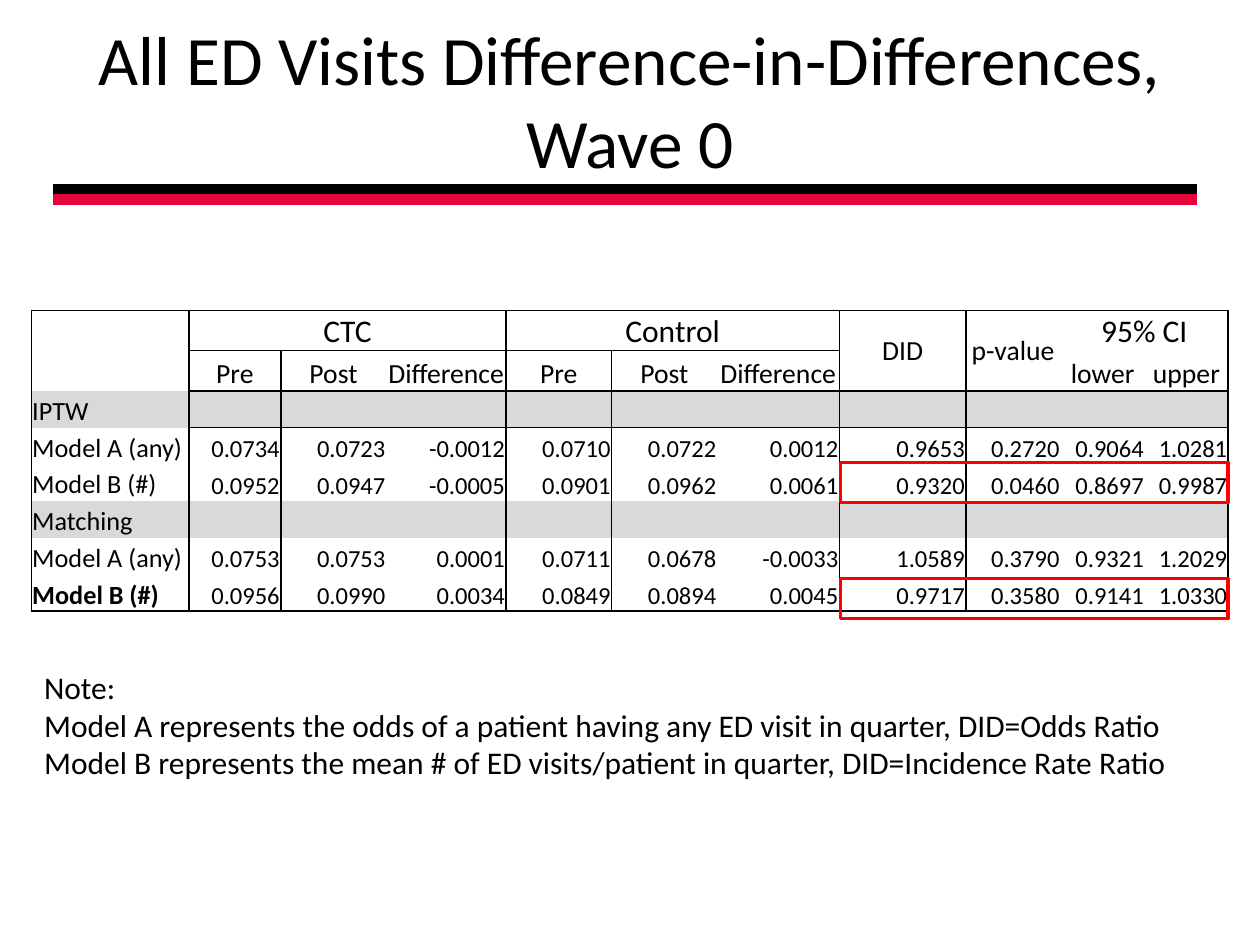
"""Build the slide of emergency visit difference-in-differences results."""
from lxml import etree
from pptx import Presentation
from pptx.dml.color import RGBColor
from pptx.enum import shapes, text
from pptx.oxml import ns
from pptx.util import Cm, Pt

HUES = {"ink": "000000", "red": "E5053A", "mark": "FF0000", "band": "D9D9D9", "page": "FFFFFF"}
HUE = {name: RGBColor.from_string(code) for name, code in HUES.items()}
LEFT, MID, RIGHT = text.PP_ALIGN.LEFT, text.PP_ALIGN.CENTER, text.PP_ALIGN.RIGHT


def write(para, words, size, align, bold=False):
    run = para.add_run()
    run.text = words
    para.alignment = align
    for key, val in {"name": "Calibri", "size": Pt(size), "bold": bold}.items():
        setattr(run.font, key, val)
    run.font.color.rgb = HUE["ink"]


def edge(props, side, spot, shown):
    line = etree.Element(ns.qn(f"a:ln{side}"), w=str(Pt(1)))
    if shown:
        fill = etree.SubElement(line, ns.qn("a:solidFill"))
        etree.SubElement(fill, ns.qn("a:srgbClr"), val=HUES["ink"])
    else:
        etree.SubElement(line, ns.qn("a:noFill"))
    props.insert(spot, line)


deck = Presentation()
deck.slide_width, deck.slide_height = Cm(25.4), Cm(19.05)
slide = deck.slides.add_slide(deck.slide_layouts[6])

for top, hue in ((3.81, "ink"), (4.02, "red")):
    rule = slide.shapes.add_connector(
        shapes.MSO_CONNECTOR.STRAIGHT, Cm(1.06), Cm(top), Cm(24.13), Cm(top))
    rule.line.color.rgb = HUE[hue]
    rule.line.width = Pt(6)
    etree.SubElement(rule._element.spPr, ns.qn("a:effectLst"))

title = slide.shapes.add_textbox(Cm(1.27), Cm(0.42), Cm(22.86), Cm(3.18)).text_frame
title.word_wrap = True
title.vertical_anchor = text.MSO_ANCHOR.MIDDLE
write(title.paragraphs[0], "All ED Visits Difference-in-Differences, Wave 0", 39.6, MID)

ROWS = [
    ["", "CTC", "", "", "Control", "", "", "DID", "p-value", "95% CI", ""],
    ["", *["Pre", "Post", "Difference"] * 2, "", "", "lower", "upper"],
    ["IPTW"] + [""] * 10,
    ["Model A (any)", "0.0734", "0.0723", "-0.0012", "0.0710", "0.0722", "0.0012",
     "0.9653", "0.2720", "0.9064", "1.0281"],
    ["Model B (#)", "0.0952", "0.0947", "-0.0005", "0.0901", "0.0962", "0.0061",
     "0.9320", "0.0460", "0.8697", "0.9987"],
    ["Matching"] + [""] * 10,
    ["Model A (any)", "0.0753", "0.0753", "0.0001", "0.0711", "0.0678", "-0.0033",
     "1.0589", "0.3790", "0.9321", "1.2029"],
    ["Model B (#)", "0.0956", "0.0990", "0.0034", "0.0849", "0.0894", "0.0045",
     "0.9717", "0.3580", "0.9141", "1.0330"],
]
WIDE = [3.18, 1.85, 2.13, 2.41, 2.13, 2.13, 2.46, 2.55, 1.91, 1.7, 1.68]
HIGH = [0.81] * 2 + [0.74] * 6
SPANS = [(0, 1, 0, 3), (0, 4, 0, 6), (0, 7, 1, 7), (0, 8, 1, 8), (0, 9, 0, 10)]
ACROSS = {0: range(11), 1: range(1, 7), 2: range(1, 11), 3: range(1, 11), 8: range(11)}
DOWN = {0: range(8), 1: range(8), 2: range(1, 8), 4: range(8), 5: range(1, 8),
        7: range(8), 8: range(8), 11: range(8)}

grid = slide.shapes.add_table(
    len(ROWS), len(WIDE), Cm(0.63), Cm(6.26), Cm(sum(WIDE)), Cm(sum(HIGH))).table
grid.first_row = grid.horz_banding = False
for col, wide in zip(grid.columns, WIDE):
    col.width = Cm(wide)
for row, high in zip(grid.rows, HIGH):
    row.height = Cm(high)
for r1, c1, r2, c2 in SPANS:
    grid.cell(r1, c1).merge(grid.cell(r2, c2))

for r, row in enumerate(ROWS):
    for c, words in enumerate(row):
        cell = grid.cell(r, c)
        tall = r == 0 and c in (7, 8)
        look = {"margin_left": Cm(0.02), "margin_right": Cm(0.02), "margin_top": Cm(0.02),
                "margin_bottom": 0,
                "vertical_anchor": text.MSO_ANCHOR.MIDDLE if tall else text.MSO_ANCHOR.BOTTOM}
        for key, val in look.items():
            setattr(cell, key, val)
        cell.fill.solid()
        cell.fill.fore_color.rgb = HUE["band" if r in (2, 5) else "page"]
        para = cell.text_frame.paragraphs[0]
        if not words:
            para._p.get_or_add_endParaRPr().set("sz", "1400")
        elif r < 2:
            write(para, words, 15.8 if r or tall else 18, MID)
        elif c == 0:
            write(para, words, 15, LEFT, r == 7)
        else:
            write(para, words, 14, RIGHT)
        low, far = r + cell.span_height, c + cell.span_width
        sides = {"L": r in DOWN.get(c, ()), "R": r in DOWN.get(far, ()),
                 "T": c in ACROSS.get(r, ()), "B": c in ACROSS.get(low, ())}
        for spot, (side, shown) in enumerate(sides.items()):
            edge(cell._tc.get_or_add_tcPr(), side, spot, shown)

NOTES = [
    "Note:",
    "Model A represents the odds of a patient having any ED visit in quarter, DID=Odds Ratio",
    "Model B represents the mean # of ED visits/patient in quarter, DID=Incidence Rate Ratio",
]
note = slide.shapes.add_textbox(Cm(0.64), Cm(13.34), Cm(23.7), Cm(2.57)).text_frame
note.word_wrap = True
for i, words in enumerate(NOTES):
    write(note.add_paragraph() if i else note.paragraphs[0], words, 18, LEFT)

for top in (9.32, 11.66):
    box = slide.shapes.add_shape(
        shapes.MSO_SHAPE.RECTANGLE, Cm(16.94), Cm(top), Cm(7.82), Cm(0.81))
    box.shadow.inherit = False
    box.fill.background()
    box.line.color.rgb = HUE["mark"]
    box.line.width = Pt(2)

deck.save("out.pptx")
